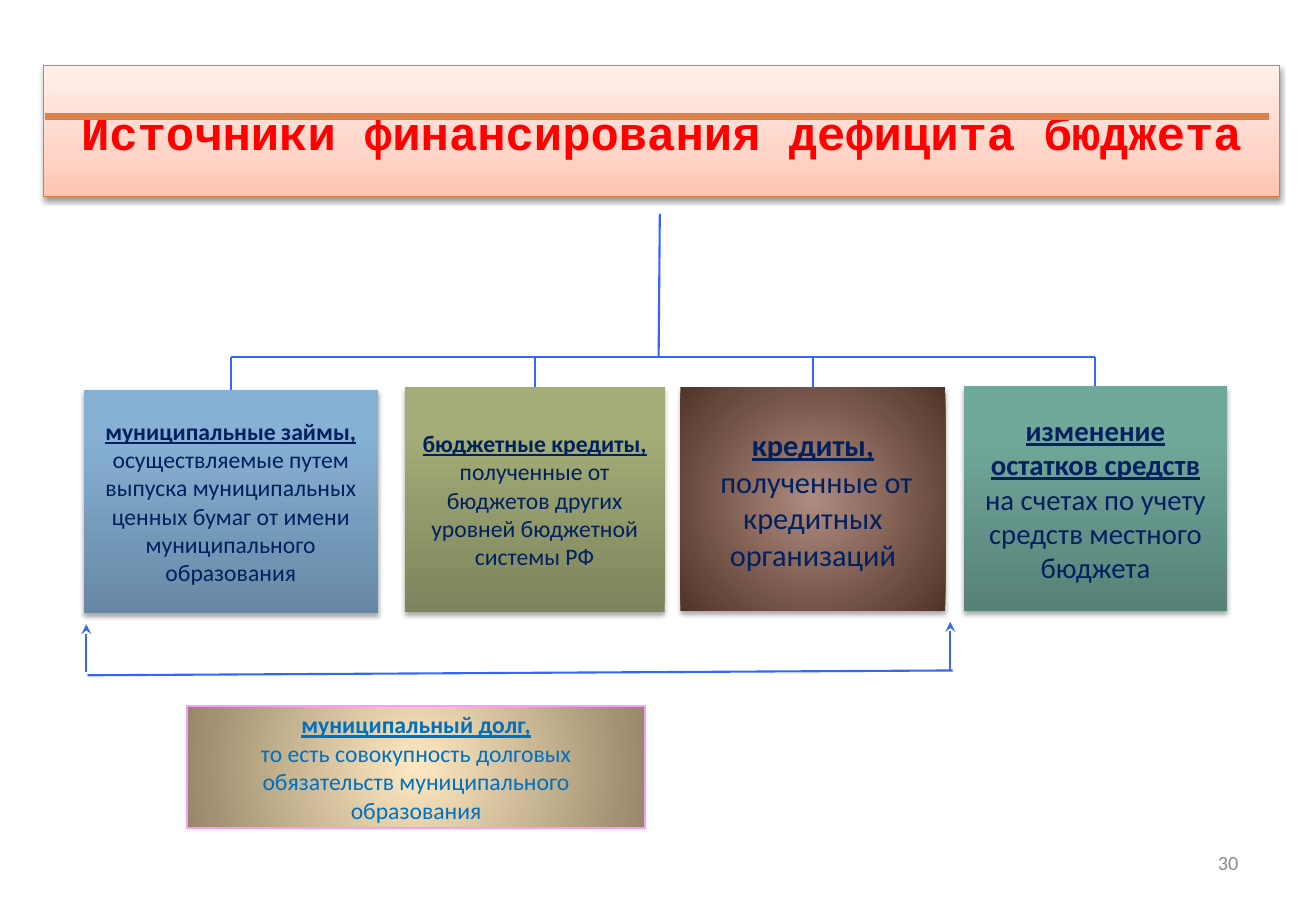
from lxml.etree import SubElement
from pptx import Presentation
from pptx.dml.color import RGBColor
from pptx.enum.shapes import MSO_CONNECTOR as Connector, MSO_SHAPE as Shape
from pptx.enum.text import MSO_ANCHOR as Anchor, PP_ALIGN as Align
from pptx.oxml import parse_xml
from pptx.oxml.ns import nsdecls, qn
from pptx.util import Inches, Pt

WIDTH, HEIGHT = Inches(10.83), Inches(7.5)

RED = RGBColor(0xFF, 0x00, 0x00)
NAVY = RGBColor(0x00, 0x20, 0x60)
AZURE = RGBColor(0x00, 0x70, 0xC0)
GREY = RGBColor(0x8C, 0x8C, 0x8C)
BLUE = RGBColor(0x33, 0x66, 0xFF)
PINK = RGBColor(0xFF, 0x99, 0xFF)
ORANGE = RGBColor(0xDC, 0x7C, 0x42)
RULE_ORANGE = RGBColor(0xDD, 0x80, 0x47)

# Gradients: (position in percent, colour)
PEACH = [(0, RGBColor(0xFF, 0xC5, 0xB1)), (35, RGBColor(0xFF, 0xD5, 0xC8)),
         (100, RGBColor(0xFF, 0xEF, 0xEA))]
SKY = [(0, RGBColor(0x67, 0x88, 0xA4)), (80, RGBColor(0x86, 0xB1, 0xD4)),
       (100, RGBColor(0x86, 0xB2, 0xD7))]
OLIVE = [(0, RGBColor(0x7E, 0x84, 0x5C)), (80, RGBColor(0xA4, 0xAC, 0x77)),
         (100, RGBColor(0xA6, 0xAE, 0x76))]
BROWN = [(0, RGBColor(0xB0, 0x8B, 0x7F)), (100, RGBColor(0x51, 0x34, 0x28))]
TEAL = [(0, RGBColor(0x57, 0x82, 0x78)), (80, RGBColor(0x71, 0xA8, 0x9C)),
        (100, RGBColor(0x70, 0xAA, 0x9D))]
SAND = [(0, RGBColor(0xFF, 0xE9, 0xC1)), (100, RGBColor(0x97, 0x86, 0x68))]

HEADING = {"bold": True, "underline": True}
PLAIN = {"bold": False, "underline": False}
BUS_ROW = 39.2

# Sources: place in percent of the slide, gradient, radial, size, paragraphs of runs
SOURCES = [
    ((6.37, 42.8, 22.35, 24.53), SKY, False, 14,
     [[("муниципальные займы,", HEADING),
       (" осуществляемые путем выпуска муниципальных ценных бумаг"
        " от имени муниципального образования", PLAIN)]]),
    ((30.75, 42.53, 19.76, 24.67), OLIVE, False, 14,
     [[("бюджетные кредиты,", HEADING),
       (" полученные от бюджетов других уровней бюджетной системы РФ", PLAIN)]]),
    ((51.71, 42.53, 20.13, 24.53), BROWN, True, 18,
     [[("кредиты,", HEADING)],
      [(" полученные от кредитных организаций", PLAIN)]]),
    ((73.22, 42.4, 20.04, 24.67), TEAL, False, 17,
     [[("изменение остатков средств ", HEADING),
       ("на счетах по учету средств местного бюджета", PLAIN)]]),
]


def place(left, top, *size):
    """Turn shares of the slide, in percent, into lengths."""
    shares = (left, top) + size
    return [round(share / 100 * (WIDTH, HEIGHT)[index % 2])
            for index, share in enumerate(shares)]


def write(shape, paragraphs, align=Align.CENTER, anchor=Anchor.MIDDLE, **font):
    frame = shape.text_frame
    frame.word_wrap = True
    frame.vertical_anchor = anchor
    for index, runs in enumerate(paragraphs):
        para = frame.add_paragraph() if index else frame.paragraphs[0]
        para.alignment = align
        for text, style in runs:
            span = para.add_run()
            span.text = text
            values = {**font, **style}
            span.font.color.rgb = values.pop("color")
            for name, value in values.items():
                setattr(span.font, name, value)


def paint_gradient(shape, stops, radial):
    shape.fill.gradient()
    gradient = shape._element.spPr.find(qn("a:gradFill"))
    colours = "".join(
        f'<a:gs pos="{position * 1000}"><a:srgbClr val="{colour}"/></a:gs>'
        for position, colour in stops)
    course = ('<a:path path="circle"><a:fillToRect l="50000" t="50000" r="50000"'
              ' b="50000"/></a:path>' if radial else '<a:lin ang="16200000" scaled="0"/>')
    gradient.getparent().replace(gradient, parse_xml(
        f'<a:gradFill {nsdecls("a")} rotWithShape="1">'
        f'<a:gsLst>{colours}</a:gsLst>{course}</a:gradFill>'))


def cast_shadow(shape, distance, opacity):
    effects = shape._element.spPr.find(qn("a:effectLst"))
    shadow = SubElement(effects, qn("a:outerShdw"), blurRad=str(Pt(3.1)),
                        dist=str(Pt(distance)), dir="5400000", rotWithShape="0")
    colour = SubElement(shadow, qn("a:srgbClr"), val="000000")
    SubElement(colour, qn("a:alpha"), val=str(opacity * 1000))


def add_box(page, area, stops, radial=False, border=None, shadow=None):
    box = page.shapes.add_shape(Shape.RECTANGLE, *place(*area))
    box.shadow.inherit = False
    paint_gradient(box, stops, radial)
    if border:
        box.line.color.rgb, box.line.width = border[0], Pt(border[1])
    else:
        box.line.fill.background()
    if shadow:
        cast_shadow(box, *shadow)
    return box


def add_line(page, start, end, color=BLUE, width=1.25, arrow=False):
    line = page.shapes.add_connector(Connector.STRAIGHT, *place(*start), *place(*end))
    line.line.color.rgb, line.line.width = color, Pt(width)
    properties = line._element.spPr
    if arrow:
        SubElement(properties.find(qn("a:ln")), qn("a:tailEnd"), type="stealth")
    SubElement(properties, qn("a:effectLst"))
    return line


def add_sources(page):
    centres = []
    for area, stops, radial, size, paragraphs in SOURCES:
        box = add_box(page, area, stops, radial, shadow=(1.8, 35))
        write(box, paragraphs, name="Calibri", size=Pt(size), color=NAVY)
        left, top, width, _ = area
        centre = left + width / 2
        branch = add_line(page, (centre, BUS_ROW), (centre, top))
        branch.end_connect(box, 0)
        centres.append(centre)
    add_line(page, (centres[0], BUS_ROW), (centres[-1], BUS_ROW))


def main():
    deck = Presentation()
    deck.slide_width, deck.slide_height = WIDTH, HEIGHT
    page = deck.slides.add_slide(deck.slide_layouts[6])

    # Title and its rule
    title = add_box(page, (3.32, 7.2, 93.91, 14.4), PEACH,
                    border=(ORANGE, 0.75), shadow=(1.6, 38))
    write(title, [[("Источники финансирования дефицита бюджета", {"bold": True})]],
          name="Courier New", size=Pt(28), color=RED)
    add_line(page, (3.42, 12.8), (96.4, 12.8), RULE_ORANGE, 3.75)

    # Page number
    number = page.shapes.add_textbox(*place(71.65, 92.67, 23.36, 5.33))
    write(number, [[("30", {})]], Align.RIGHT, Anchor.TOP,
          name="Calibri", size=Pt(12), color=GREY)

    # Tree of sources
    add_line(page, (50.14, 23.47), (50.05, BUS_ROW))
    add_sources(page)

    # Bracket under the sources that make up the debt
    add_line(page, (6.65, 74.13), (72.39, 73.6))
    for column, foot, tip in [(6.56, 73.73, 68.53), (72.21, 73.6, 68.27)]:
        add_line(page, (column, foot), (column, tip), arrow=True)

    # Municipal debt
    debt = add_box(page, (14.22, 77.47, 34.81, 13.47), SAND, True, border=(PINK, 1.25))
    write(debt, [[("муниципальный долг,", HEADING)],
                 [("то есть совокупность долговых обязательств"
                   " муниципального образования", PLAIN)]],
          name="Calibri", size=Pt(14), color=AZURE)

    deck.save("out.pptx")


if __name__ == "__main__":
    main()
